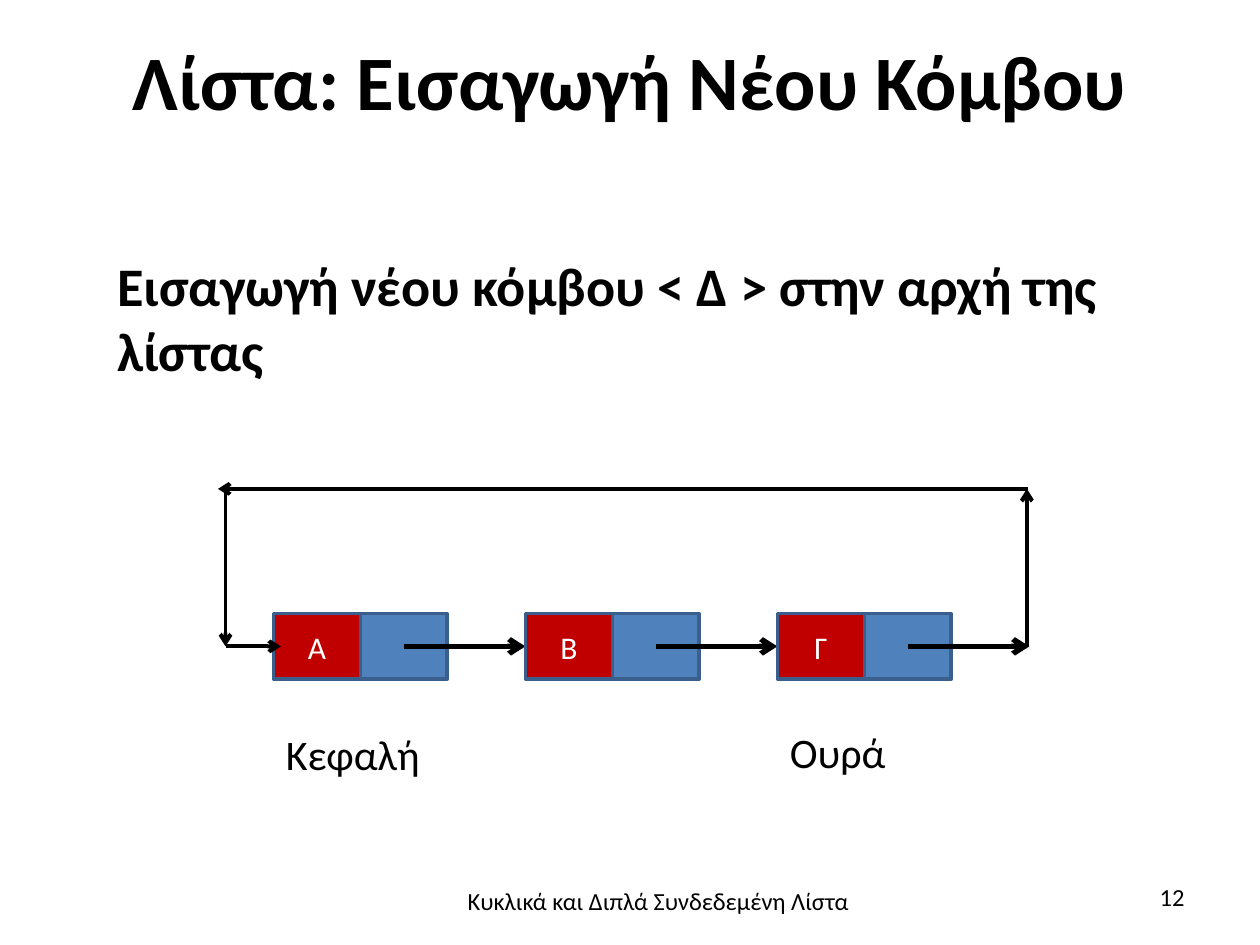
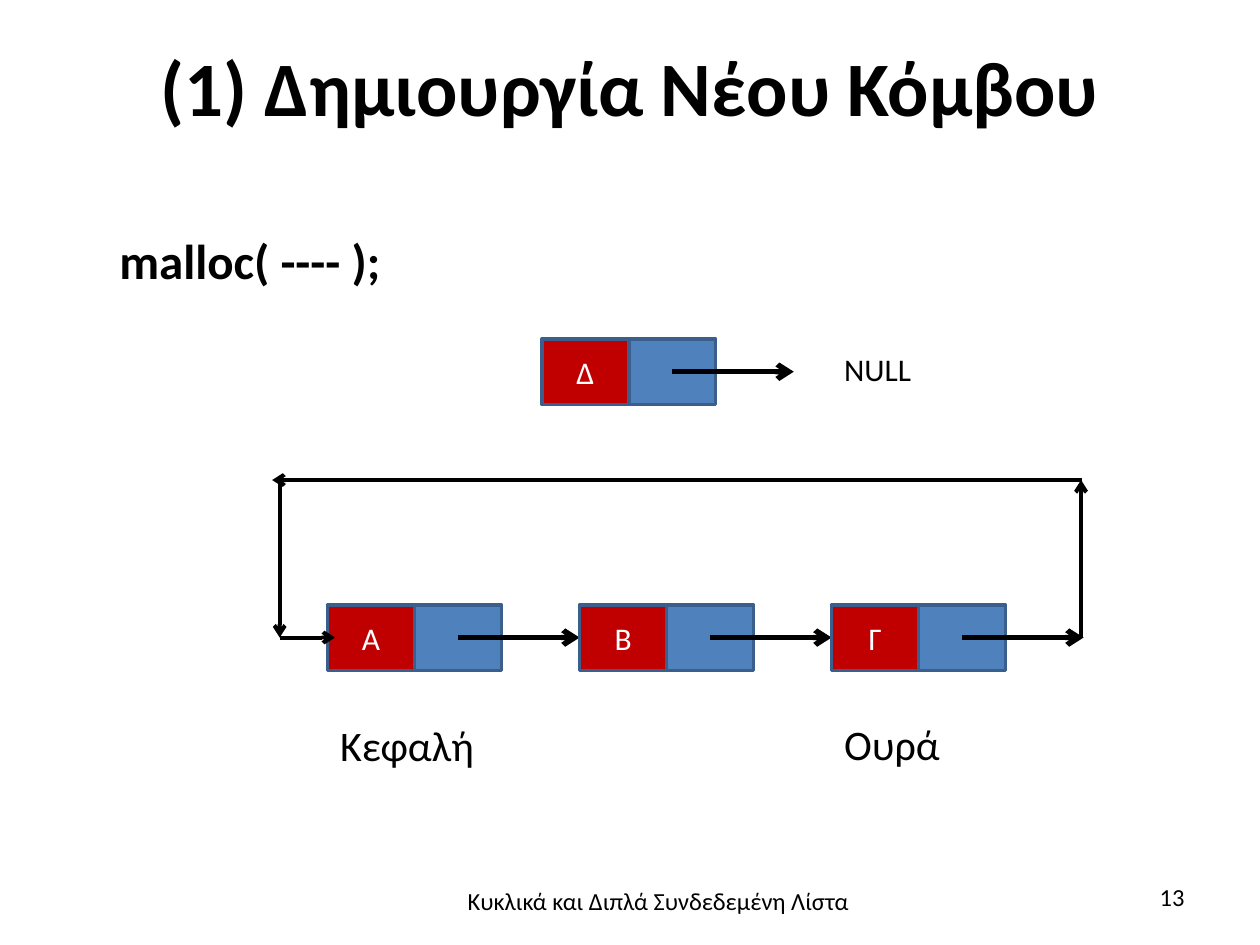
from lxml import etree
from pptx import Presentation
from pptx.dml.color import RGBColor
from pptx.enum.shapes import MSO_CONNECTOR, MSO_SHAPE
from pptx.enum.text import MSO_ANCHOR, PP_ALIGN
from pptx.oxml.ns import qn
from pptx.util import Inches, Pt

BLACK = RGBColor(0, 0, 0)
WHITE = RGBColor(255, 255, 255)
RED = RGBColor(0xC0, 0, 0)
BLUE = RGBColor(0x4F, 0x81, 0xBD)
EDGE = RGBColor(0x3A, 0x5F, 0x8C)
LEFT, CENTER, RIGHT = PP_ALIGN.LEFT, PP_ALIGN.CENTER, PP_ALIGN.RIGHT
TOP, MIDDLE = MSO_ANCHOR.TOP, MSO_ANCHOR.MIDDLE
RECT, STRAIGHT = MSO_SHAPE.RECTANGLE, MSO_CONNECTOR.STRAIGHT

FONT = "Calibri"
FOOTER = "Κυκλικά και Διπλά Συνδεδεμένη Λίστα"
CELL_W, CELL_H = 0.69, 0.52
STEP = 2
RISE = 1.25


def write(shape, text, size=18, color=BLACK, bold=False, align=LEFT,
          anchor=TOP, pad=(0.1, 0.05, 0.1, 0.05), wrap=True, space=None):
    frame = shape.text_frame
    frame.word_wrap = wrap
    frame.vertical_anchor = anchor
    (frame.margin_left, frame.margin_top,
     frame.margin_right, frame.margin_bottom) = map(Inches, pad)
    para = frame.paragraphs[0]
    para.alignment = align
    para.line_spacing = space
    run = para.add_run()
    run.text = text
    run.font.name = FONT
    run.font.size = Pt(size)
    run.font.bold = bold
    run.font.color.rgb = color


def label(slide, text, box, **style):
    write(slide.shapes.add_textbox(*map(Inches, box)), text, **style)


def arrow(slide, start, end, width=2.25):
    line = slide.shapes.add_connector(STRAIGHT, *map(Inches, start + end))
    line.line.color.rgb = BLACK
    line.line.width = Pt(width)
    etree.SubElement(line.line._get_or_add_ln(), qn("a:tailEnd"), type="arrow")
    etree.SubElement(line._element.spPr, qn("a:effectLst"))


def cell(slide, x, y, fill):
    shape = slide.shapes.add_shape(
        RECT, *map(Inches, (x, y, CELL_W, CELL_H)))
    shape.shadow.inherit = False
    shape.fill.solid()
    shape.fill.fore_color.rgb = fill
    shape.line.color.rgb = EDGE
    shape.line.width = Pt(2)
    return shape


def node(slide, x, y, name):
    write(cell(slide, x, y, RED), name, color=WHITE, align=CENTER,
          anchor=MIDDLE, pad=(0.11, 0.06, 0.11, 0.06))
    cell(slide, x + CELL_W, y, BLUE)
    mid = y + CELL_H / 2
    arrow(slide, (x + 1.5 * CELL_W, mid), (x + STEP, mid), 3)


def ring(slide, x, y, names="ΑΒΓ"):
    for i, name in enumerate(names):
        node(slide, x + i * STEP, y, name)
    tail = x + (len(names) - 1) * STEP
    label(slide, "Κεφαλή", (x, y + 0.86, 1.61, 0.48), size=24)
    label(slide, "Ουρά", (tail, y + 0.85, 1.39, 0.48), size=24)
    near, far = x - 0.38, tail + STEP - 0.02
    mid = y + CELL_H / 2
    top = mid - RISE
    arrow(slide, (far, mid), (far, top))
    arrow(slide, (far + 0.01, top), (near - 0.06, top))
    arrow(slide, (near, top), (near, mid))
    arrow(slide, (near, mid), (x + 0.06, mid))


def base(deck, title, top, number):
    slide = deck.slides.add_slide(deck.slide_layouts[6])
    label(slide, title, (0.04, top, 9.92, 1.69), size=44, bold=True,
          align=CENTER, anchor=MIDDLE, pad=(0, 0.02, 0, 0), space=0.98)
    label(slide, FOOTER, (3.48, 6.98, 3.49, 0.55), size=14, align=CENTER)
    label(slide, str(number), (7.17, 6.95, 2.33, 0.4), size=14, align=RIGHT)
    return slide


def insert(deck):
    slide = base(deck, "Λίστα: Εισαγωγή Νέου Κόμβου", -0.19, 12)
    label(slide, "Εισαγωγή νέου κόμβου < Δ > στην αρχή της λίστας",
          (0.82, 1.94, 8.51, 1.15), size=31, bold=True,
          pad=(0.11, 0.06, 0.11, 0.06))
    ring(slide, 2.17, 4.87)


def create(deck):
    slide = base(deck, "(1) Δημιουργία Νέου Κόμβου", -0.15, 13)
    label(slide, "malloc( ---- );", (0.85, 1.78, 2.36, 0.57),
          size=28, bold=True)
    node(slide, 4.3, 2.69, "Δ")
    label(slide, "NULL", (6.59, 2.72, 0.87, 0.39), wrap=False,
          pad=(0.11, 0.06, 0.11, 0.06))
    ring(slide, 2.6, 4.8)


def main():
    deck = Presentation()
    deck.slide_width, deck.slide_height = Inches(10), Inches(7.5)
    insert(deck)
    create(deck)
    deck.save("out.pptx")


if __name__ == "__main__":
    main()
